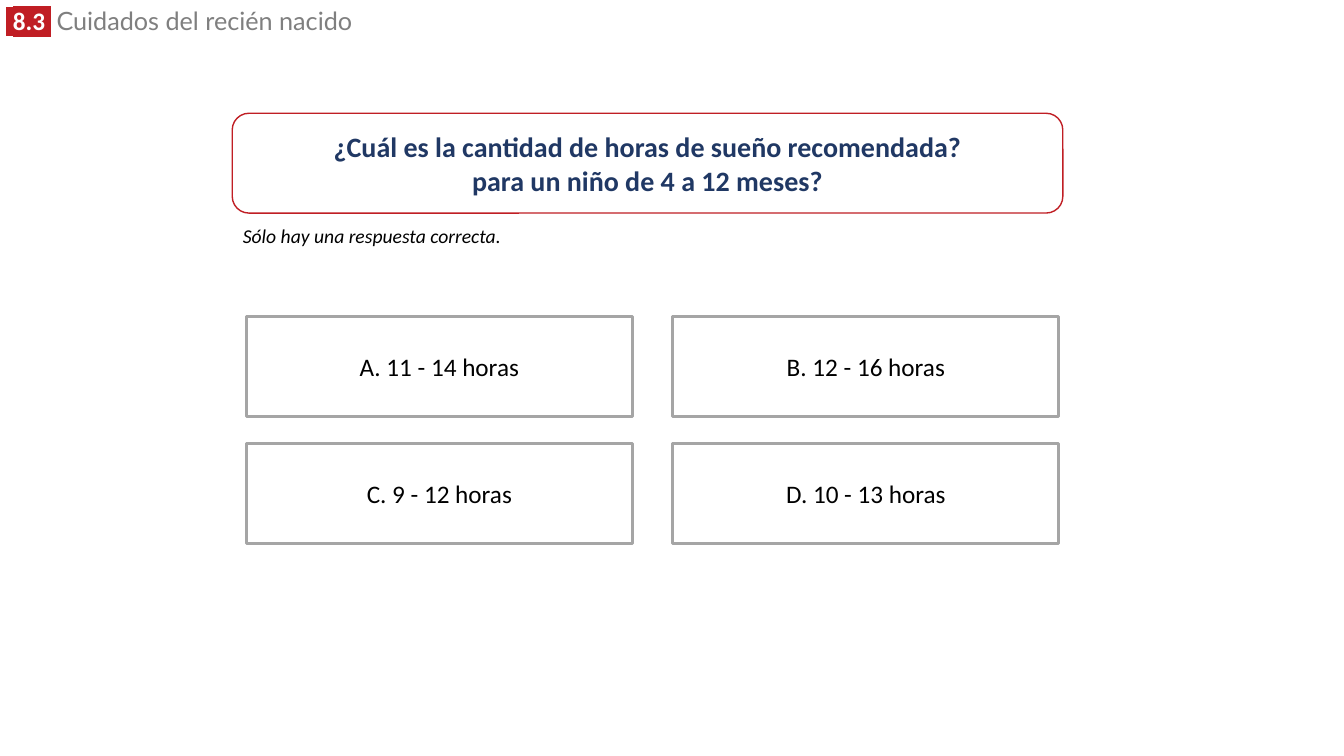
from lxml import etree
from pptx import Presentation
from pptx.dml.color import RGBColor
from pptx.enum import shapes as sh, text as tx
from pptx.oxml.ns import qn
from pptx.util import Pt

# Content
RED, NAVY, GREY, BLACK, WHITE = "C01E24", "203864", "7F7F7F", "000000", "FFFFFF"
BORDER = "A5A5A5"
HEADING = [  # text, font, colour, bold, highlight
    (" ", "Arial", WHITE, True, RED),
    ("8.3 ", "Calibri", WHITE, True, RED),
    (" ", "Calibri", GREY, False, None),
    ("Cuidados del recién nacido", "Lato", GREY, False, None),
]
QUESTION = "¿Cuál es la cantidad de horas de sueño recomendada?\npara un niño de 4 a 12 meses?"
HINT = "Sólo hay una respuesta correcta."
ANSWERS = ["A. 11 - 14 horas", "B. 12 - 16 horas", "C. 9 - 12 horas", "D. 10 - 13 horas"]

# Answer grid, in points
GRID_LEFT, GRID_TOP = 176, 226
COLUMN_STEP, ROW_STEP = 304.6, 90.8
ANSWER_WIDTH, ANSWER_HEIGHT = 275.8, 71.3


def color(hex_value):
    return RGBColor.from_string(hex_value)


def style(run, size, hex_value, font="Calibri", bold=False, italic=False):
    run.font.size, run.font.name = Pt(size), font
    run.font.bold, run.font.italic = bold, italic
    run.font.color.rgb = color(hex_value)


def highlight(run, hex_value):
    mark = etree.Element(qn("a:highlight"))
    etree.SubElement(mark, qn("a:srgbClr")).set("val", hex_value)
    run.font.fill  # the highlight follows the text fill
    run._r.rPr.find(qn("a:solidFill")).addnext(mark)


def add_text(slide, left, top, width, height):
    frame = slide.shapes.add_textbox(Pt(left), Pt(top), Pt(width), Pt(height)).text_frame
    frame.word_wrap = True
    frame.auto_size = tx.MSO_AUTO_SIZE.SHAPE_TO_FIT_TEXT
    return frame


def add_box(slide, kind, bounds, line, line_width, words, size, hex_value, bold=False):
    box = slide.shapes.add_shape(kind, *map(Pt, bounds))
    box.shadow.inherit = False
    box.fill.solid()
    box.fill.fore_color.rgb = color(WHITE)
    box.line.color.rgb = color(line)
    box.line.width = Pt(line_width)
    box.text_frame.word_wrap = True
    box.text_frame.vertical_anchor = tx.MSO_ANCHOR.MIDDLE
    box.text_frame.text = words
    for paragraph in box.text_frame.paragraphs:
        paragraph.alignment = tx.PP_ALIGN.CENTER
        style(paragraph.runs[0], size, hex_value, bold=bold)


def main():
    prs = Presentation()
    prs.slide_width, prs.slide_height = Pt(960), Pt(540)
    slide = prs.slides.add_slide(prs.slide_layouts[6])

    # Section heading
    heading = add_text(slide, -2.9, 4.3, 332, 24.5).paragraphs[0]
    heading.line_spacing = 0.8
    for words, font, hex_value, bold, marker in HEADING:
        run = heading.add_run()
        run.text = words
        style(run, 18, hex_value, font, bold)
        if marker:
            highlight(run, marker)

    # Question and hint
    add_box(slide, sh.MSO_SHAPE.ROUNDED_RECTANGLE, (165.9, 80.9, 593.3, 71.3),
            RED, 1, QUESTION, 20, NAVY, bold=True)
    hint = add_text(slide, 166.3, 156.2, 242, 24.5)
    hint.text = HINT
    style(hint.paragraphs[0].runs[0], 14, BLACK, italic=True)

    # Answers, two per row
    for i, answer in enumerate(ANSWERS):
        row, column = divmod(i, 2)
        bounds = (GRID_LEFT + column * COLUMN_STEP, GRID_TOP + row * ROW_STEP,
                  ANSWER_WIDTH, ANSWER_HEIGHT)
        add_box(slide, sh.MSO_SHAPE.RECTANGLE, bounds, BORDER, 2, answer, 18, BLACK)

    prs.save("out.pptx")


if __name__ == "__main__":
    main()
